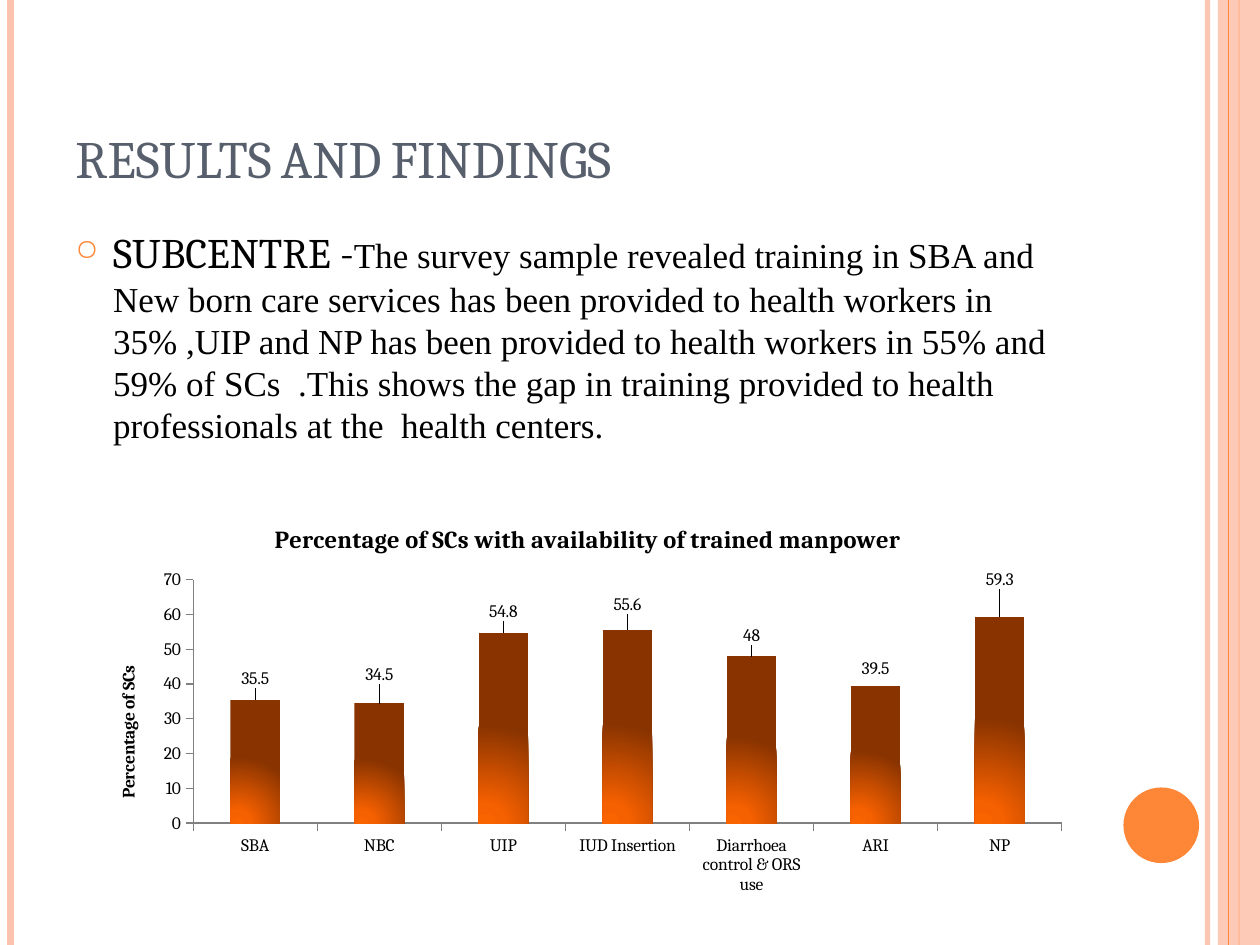
from lxml.etree import SubElement
from pptx import Presentation
from pptx.chart.data import CategoryChartData
from pptx.dml.color import RGBColor
from pptx.enum.chart import XL_CHART_TYPE, XL_LABEL_POSITION, XL_TICK_MARK
from pptx.enum.shapes import MSO_CONNECTOR, MSO_SHAPE
from pptx.enum.text import MSO_ANCHOR
from pptx.oxml import parse_xml
from pptx.oxml.ns import nsdecls, qn
from pptx.util import Pt

ORANGE = RGBColor(0xFE, 0x86, 0x37)
PEACH = RGBColor(0xFE, 0xC3, 0xAE)
SLATE = RGBColor(0x57, 0x5F, 0x6D)
BLACK = RGBColor(0, 0, 0)
GREY = RGBColor(0x80, 0x80, 0x80)
HEIGHT = 540

# Category, percentage, and label shift as a fraction of the chart height
TRAINING = [
    ("SBA", 35.5, -0.09),
    ("NBC", 34.5, -0.11),
    ("UIP", 54.8, -0.09),
    ("IUD Insertion", 55.6, -0.1),
    ("Diarrhoea control & ORS use", 48, -0.09),
    ("ARI", 39.5, -0.08),
    ("NP", 59.3, -0.13),
]
FINDINGS = (
    "The survey sample revealed training in SBA and New born care services "
    "has been provided to health workers in 35% ,UIP and NP has been provided "
    "to health workers in 55% and 59% of SCs  .This shows the gap in training "
    "provided to health professionals at the  health centers."
)


def set_alpha(fill_parent, percent):
    color = fill_parent.find(".//" + qn("a:srgbClr"))
    SubElement(color, qn("a:alpha"), val=str(percent * 1000))


def add_stripe(s, x, width, color, alpha=None):
    line = s.shapes.add_connector(
        MSO_CONNECTOR.STRAIGHT, Pt(x), 0, Pt(x), Pt(HEIGHT))
    line.line.width = Pt(width)
    line.line.color.rgb = color
    props = line._element.spPr
    if alpha:
        set_alpha(props, alpha)
    SubElement(props, qn("a:effectLst"))


def add_filled(s, kind, x, y, w, h, color, alpha=None):
    sp = s.shapes.add_shape(kind, Pt(x), Pt(y), Pt(w), Pt(h))
    sp.shadow.inherit = False
    sp.fill.solid()
    sp.fill.fore_color.rgb = color
    sp.line.fill.background()
    if alpha:
        set_alpha(sp._element.spPr, alpha)


def add_frame(s, x, y, w, h, anchor=MSO_ANCHOR.TOP):
    tf = s.shapes.add_textbox(Pt(x), Pt(y), Pt(w), Pt(h)).text_frame
    tf.word_wrap = True
    tf.vertical_anchor = anchor
    return tf


def add_text(p, text, size, font="Cambria", color=BLACK, bold=False, small_caps=False):
    r = p.add_run()
    r.text = text
    r.font.size = Pt(size)
    r.font.name = font
    r.font.bold = bold
    r.font.color.rgb = color
    if small_caps:
        r._r.get_or_add_rPr().set("cap", "small")


def set_bullet(p, char, color, percent, indent):
    pPr = p._p.get_or_add_pPr()
    pPr.set("marL", str(Pt(indent)))
    pPr.set("indent", str(-Pt(indent)))
    SubElement(SubElement(pPr, qn("a:buClr")), qn("a:srgbClr"), val=str(color))
    SubElement(pPr, qn("a:buSzPct"), val=str(percent * 1000))
    SubElement(pPr, qn("a:buChar"), char=char)


def manual_layout(**fields):
    items = "".join(f'<c:{k} val="{v}"/>' for k, v in fields.items())
    return parse_xml(
        f'<c:layout {nsdecls("c")}><c:manualLayout>{items}</c:manualLayout></c:layout>')


def set_radial_fill(series):
    """Glow from the lower left corner of each bar."""
    series.format.fill.solid()
    props = series.format._element if hasattr(series.format, "_element") else series._element.spPr
    props = series._element.find(qn("c:spPr"))
    gradient = parse_xml(
        f'<a:gradFill {nsdecls("a")} rotWithShape="1"><a:gsLst>'
        '<a:gs pos="0"><a:srgbClr val="F96400"/></a:gs>'
        '<a:gs pos="20000"><a:srgbClr val="F56000"/></a:gs>'
        '<a:gs pos="100000"><a:srgbClr val="883300"/></a:gs></a:gsLst>'
        '<a:path path="circle"><a:fillToRect l="15000" t="100000" r="85000" b="0"/>'
        '</a:path></a:gradFill>')
    props.replace(props.find(qn("a:solidFill")), gradient)


def style_axis(axis):
    axis.has_major_gridlines = False
    axis.major_tick_mark = XL_TICK_MARK.OUTSIDE
    axis.format.line.color.rgb = GREY
    axis.format.line.width = Pt(0.75)


def add_labels(plot, series):
    plot.has_data_labels = True
    plot.data_labels.show_value = True
    plot.data_labels.position = XL_LABEL_POSITION.INSIDE_END
    for i, (_, _, shift) in enumerate(TRAINING):
        label = series.points[i].data_label
        label.position = XL_LABEL_POSITION.INSIDE_END
        idx = label._dLbl.find(qn("c:idx"))
        idx.addnext(manual_layout(x=0, y=shift))


def add_training_chart(s):
    data = CategoryChartData()
    data.categories = [name for name, _, _ in TRAINING]
    data.add_series("Series 1", [value for _, value, _ in TRAINING])
    chart = s.shapes.add_chart(
        XL_CHART_TYPE.COLUMN_STACKED, Pt(54), Pt(288), Pt(564), Pt(228), data).chart
    chart.font.name = "Cambria"
    chart.font.size = Pt(10)
    chart.font.color.rgb = BLACK
    chart.has_legend = False
    chart.has_title = True
    add_text(chart.chart_title.text_frame.paragraphs[0],
             "Percentage of SCs with availability of trained manpower", 14, bold=True)

    style_axis(chart.category_axis)
    axis = chart.value_axis
    style_axis(axis)
    axis.minimum_scale, axis.maximum_scale, axis.major_unit = 0, 70, 10
    add_text(axis.axis_title.text_frame.paragraphs[0], "Percentage of SCs", 10, bold=True)

    plot = chart.plots[0]
    plot.gap_width = 150
    plot.overlap = 100
    plot.vary_by_categories = False
    set_radial_fill(plot.series[0])
    add_labels(plot, plot.series[0])

    area = chart._chartSpace.chart.plotArea
    old = area.find(qn("c:layout"))
    if old is not None:
        area.remove(old)
    area.insert(0, manual_layout(layoutTarget="inner", xMode="edge", yMode="edge",
                                 x=0.1, y=0.19, w=0.88, h=0.61))


def add_side_decoration(s):
    add_stripe(s, 690, 3, PEACH, alpha=93)
    add_stripe(s, 6, 4.5, PEACH)
    add_stripe(s, 708, 1.5, ORANGE)
    add_filled(s, MSO_SHAPE.RECTANGLE, 696, 0, 24, HEIGHT, PEACH, alpha=87)
    add_stripe(s, 702, 0.75, ORANGE)
    add_filled(s, MSO_SHAPE.OVAL, 642, 450, 43.2, 43.2, ORANGE)


def main():
    prs = Presentation()
    prs.slide_width, prs.slide_height = Pt(720), Pt(HEIGHT)
    s = prs.slides.add_slide(prs.slide_layouts[6])
    add_side_decoration(s)

    tf = add_frame(s, 36, 21.6, 588, 90, MSO_ANCHOR.BOTTOM)
    add_text(tf.paragraphs[0], "RESULTS AND FINDINGS", 30, color=SLATE, small_caps=True)

    p = add_frame(s, 36, 126, 588, 384).paragraphs[0]
    p.space_before = Pt(6)
    set_bullet(p, "○", ORANGE, 70, 21.6)
    add_text(p, "SUBCENTRE -", 24)
    add_text(p, FINDINGS, 20, font="Times New Roman")

    add_training_chart(s)
    prs.save("out.pptx")


if __name__ == "__main__":
    main()
